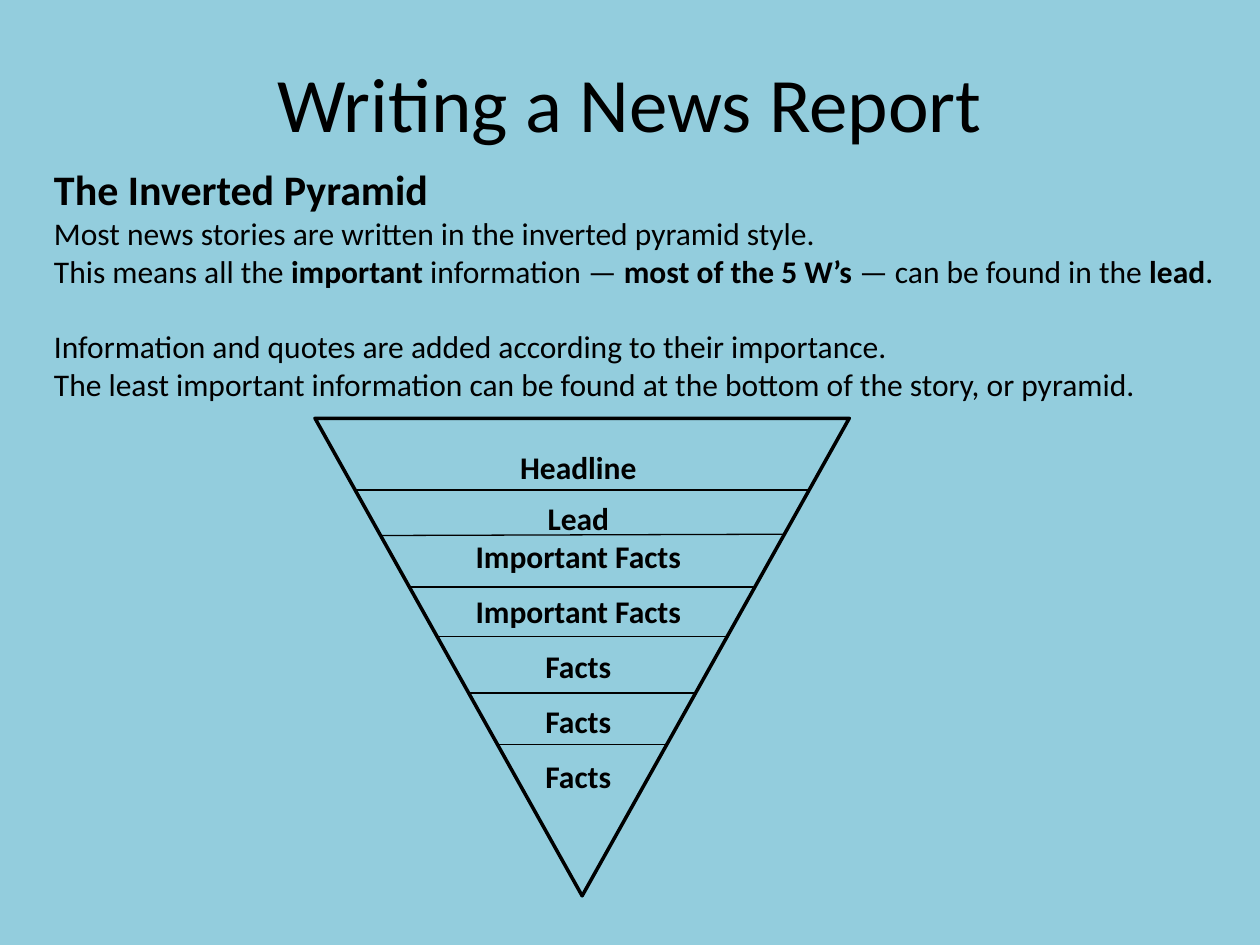
from lxml import etree
from pptx import Presentation
from pptx.dml.color import RGBColor
from pptx.enum.shapes import MSO_CONNECTOR, MSO_SHAPE
from pptx.enum.text import MSO_ANCHOR, MSO_AUTO_SIZE, PP_ALIGN
from pptx.oxml.ns import qn
from pptx.util import Inches, Pt

STRAIGHT = MSO_CONNECTOR.STRAIGHT
TRIANGLE = MSO_SHAPE.ISOSCELES_TRIANGLE
MIDDLE = MSO_ANCHOR.MIDDLE
GROW = MSO_AUTO_SIZE.SHAPE_TO_FIT_TEXT
CENTER = PP_ALIGN.CENTER

BLACK = RGBColor(0x00, 0x00, 0x00)
SKY = RGBColor(0x93, 0xCD, 0xDD)
FONT = "Calibri"
TITLE_ONLY = 5

INTRO = [
    (24, 0, [("The Inverted Pyramid", True)]),
    (18, 0, [("Most news stories are written in the inverted pyramid style.", False)]),
    (18, 0, [
        ("This means all the ", False),
        ("important ", True),
        ("information — ", False),
        ("most of the 5 W’s", True),
        (" — can be found in the ", False),
        ("lead", True),
        (".", False),
    ]),
    (18, 21.5, [("Information and quotes are added according to their importance.", False)]),
    (18, 0, [("The least important information can be found at the bottom "
              "of the story, or pyramid.", False)]),
]

LAYERS = [
    ("Headline", 0),
    ("Lead", 7.3),
    ("Important Facts", 0),
    ("Important Facts", 9.8),
    ("Facts", 9.8),
    ("Facts", 9.8),
    ("Facts", 9.8),
]
DIVIDERS = [(0.57, 0.57), (0.93, 0.92), (1.34, 1.34),
            (1.73, 1.73), (2.18, 2.18), (2.59, 2.59)]


def style_span(span, size, bold):
    span.font.name = FONT
    span.font.size = Pt(size)
    span.font.bold = bold
    span.font.color.rgb = BLACK


def add_paragraph(frame, index, size, gap, spans):
    para = frame.add_paragraph() if index else frame.paragraphs[0]
    para.space_before = Pt(gap)
    for text, bold in spans:
        span = para.add_run()
        span.text = text
        style_span(span, size, bold)
    return para


def add_text_box(shapes, left, top, width, height):
    box = shapes.add_textbox(Inches(left), Inches(top), Inches(width), Inches(height))
    box.text_frame.word_wrap = True
    box.text_frame.auto_size = GROW
    return box.text_frame


def add_title(page, left, top, width, height):
    title = page.shapes.title
    title.left, title.top = Inches(left), Inches(top)
    title.width, title.height = Inches(width), Inches(height)
    frame = title.text_frame
    frame.text = "Writing a News Report"
    frame.vertical_anchor = MIDDLE
    para = frame.paragraphs[0]
    para.alignment = CENTER
    style_span(para.runs[0], 44, False)


def add_intro(page, left, top, width, height):
    frame = add_text_box(page.shapes, left, top, width, height)
    for index, (size, gap, spans) in enumerate(INTRO):
        add_paragraph(frame, index, size, gap, spans)


def add_pyramid(page, left, top, width, height):
    shapes = page.shapes.add_group_shape().shapes
    triangle = shapes.add_shape(
        TRIANGLE, Inches(left), Inches(top), Inches(width), Inches(height))
    triangle.rotation = 180
    triangle.shadow.inherit = False
    triangle.fill.background()
    triangle.line.color.rgb = BLACK
    triangle.line.width = Pt(2)

    slope = width / 2 / height
    for start, end in DIVIDERS:
        divider = shapes.add_connector(
            STRAIGHT,
            Inches(left + slope * start), Inches(top + start),
            Inches(left + width - slope * end), Inches(top + end))
        divider.line.color.rgb = BLACK
        divider.line.width = Pt(0.75)
        etree.SubElement(divider._element.spPr, qn("a:effectLst"))

    frame = add_text_box(shapes, left + 0.28, top + 0.19, width - 0.62, height - 0.32)
    for index, (label, gap) in enumerate(LAYERS):
        para = add_paragraph(frame, index, 18, gap, [(label, True)])
        para.alignment = CENTER


def main():
    deck = Presentation()
    deck.slide_width, deck.slide_height = Inches(10), Inches(7.5)
    page = deck.slides.add_slide(deck.slide_layouts[TITLE_ONLY])
    page.background.fill.solid()
    page.background.fill.fore_color.rgb = SKY
    add_title(page, 0, 0, 10, 1.61)
    add_intro(page, 0.33, 1.25, 9.42, 1.72)
    add_pyramid(page, 2.5, 3.32, 4.24, 3.79)
    deck.save("out.pptx")


if __name__ == "__main__":
    main()
